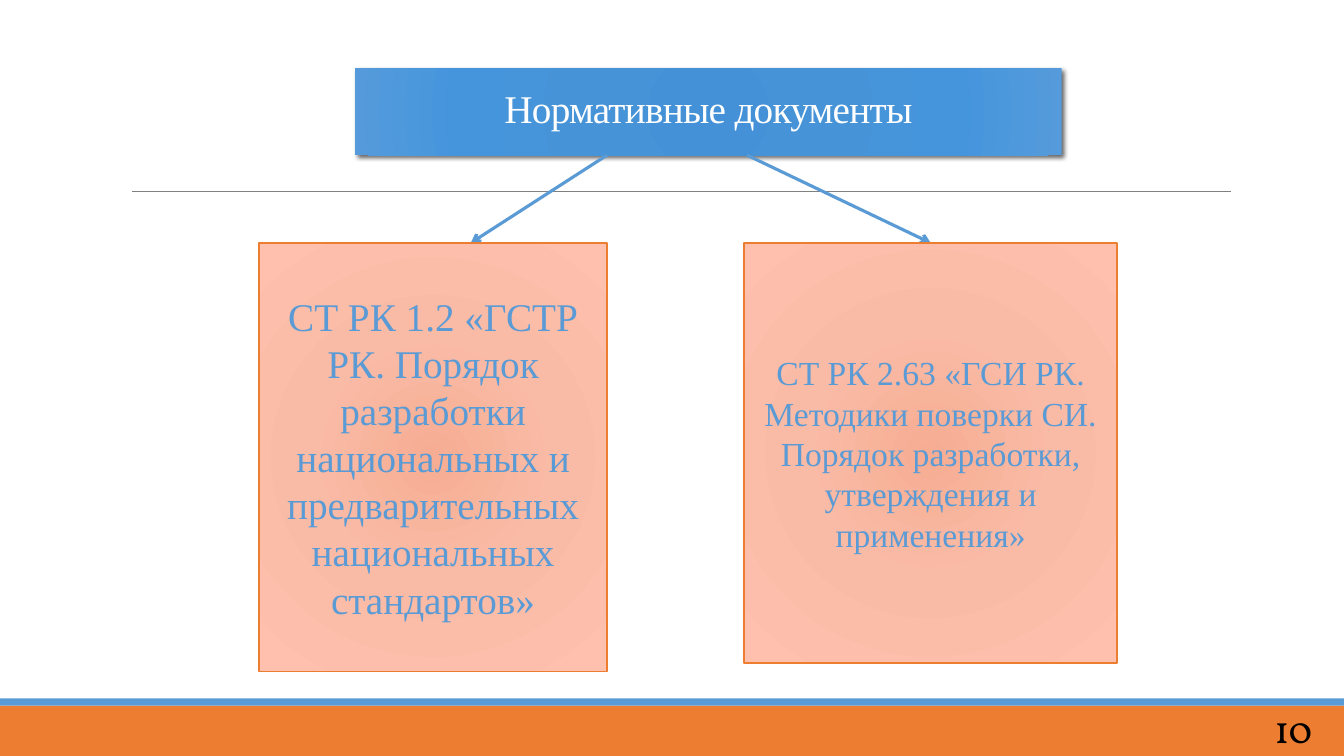
from dataclasses import dataclass
from typing import Optional

from pptx import Presentation
from pptx.dml.color import RGBColor
from pptx.enum.shapes import MSO_CONNECTOR as CONN, MSO_SHAPE as SHAPE
from pptx.enum.text import MSO_ANCHOR as ANCHOR, PP_ALIGN as ALIGN
from pptx.oxml import parse_xml
from pptx.oxml.ns import nsdecls, qn
from pptx.util import Inches, Pt

COLORS = {
    "orange": "ED7D31",
    "blue": "5B9BD5",
    "gray": "808080",
    "white": "FFFFFF",
    "black": "000000",
}
TITLE_STOPS = ((0, "4491D8"), (34, "4793D7"), (70, "4595DD"), (100, "559BDB"))
CARD_STOPS = ((0, "F6AD93"), (45, "FABBA6"), (100, "FFC1AD"))
SERIF = "Times New Roman"
CARD_TOP = 2.41
TITLE_BOTTOM = 1.54


@dataclass
class Box:
    left: float
    top: float
    width: float
    height: float
    fill: Optional[str] = None
    stops: tuple = ()
    line: Optional[str] = None


@dataclass
class Card:
    box: Box
    text: str
    size: int


@dataclass
class Line:
    x1: float
    y1: float
    x2: float
    y2: float
    color: str
    width: float
    arrow: bool = False


BANDS = [
    Box(0, 7, 13.33, 0.5, fill="orange"),
    Box(0, 6.93, 13.33, 0.07, fill="blue"),
]
TITLE = Box(3.52, 0.68, 7.01, 0.86, stops=TITLE_STOPS)
DIVIDER = Line(1.31, 1.9, 12.21, 1.9, "gray", 0.5)
ARROWS = [
    Line(x1, TITLE_BOTTOM, x2, CARD_TOP, "blue", 2.25, arrow=True)
    for x1, x2 in ((6.02, 4.67), (7.41, 9.23))
]
CARDS = [
    Card(Box(2.57, CARD_TOP, 3.45, 4.25, stops=CARD_STOPS, line="orange"),
         "СТ РК 1.2 «ГСТР РК. Порядок разработки национальных и "
         "предварительных национальных стандартов»", 28),
    Card(Box(7.38, CARD_TOP, 3.7, 4.17, stops=CARD_STOPS, line="orange"),
         "СТ РК 2.63 «ГСИ РК. Методики поверки СИ. Порядок разработки, "
         "утверждения и применения»", 24),
]


def rgb(name: str) -> RGBColor:
    return RGBColor.from_string(COLORS[name])


def set_radial_fill(s, stops: tuple) -> None:
    """Fill a shape with a gradient spreading from its centre."""
    s.fill.background()
    marks = "".join(
        f'<a:gs pos="{pos * 1000}"><a:srgbClr val="{color}"/></a:gs>'
        for pos, color in stops)
    grad = parse_xml(
        f'<a:gradFill {nsdecls("a")} rotWithShape="1"><a:gsLst>{marks}</a:gsLst>'
        '<a:path path="circle"><a:fillToRect l="100000" t="100000" '
        'r="100000" b="100000"/></a:path></a:gradFill>')
    sp_pr = s._element.spPr
    sp_pr.replace(sp_pr.find(qn("a:noFill")), grad)


def add_drop_shadow(s) -> None:
    effects = s._element.spPr.find(qn("a:effectLst"))
    effects.append(parse_xml(
        f'<a:outerShdw {nsdecls("a")} blurRad="{Pt(3.5)}" dist="{Pt(2)}" '
        f'dir="2700000" rotWithShape="0"><a:srgbClr val="{COLORS["black"]}">'
        '<a:alpha val="60000"/></a:srgbClr></a:outerShdw>'))


def add_box(slide, box: Box):
    s = slide.shapes.add_shape(
        SHAPE.RECTANGLE, Inches(box.left), Inches(box.top),
        Inches(box.width), Inches(box.height))
    s.shadow.inherit = False
    if box.stops:
        set_radial_fill(s, box.stops)
    else:
        s.fill.solid()
        s.fill.fore_color.rgb = rgb(box.fill)
    if box.line:
        s.line.color.rgb = rgb(box.line)
        s.line.width = Pt(1)
    else:
        s.line.fill.background()
    return s


def add_line(slide, line: Line) -> None:
    c = slide.shapes.add_connector(
        CONN.STRAIGHT, Inches(line.x1), Inches(line.y1),
        Inches(line.x2), Inches(line.y2))
    c.line.color.rgb = rgb(line.color)
    c.line.width = Pt(line.width)
    if line.arrow:
        c.line._get_or_add_ln().append(
            parse_xml(f'<a:tailEnd {nsdecls("a")} type="arrow"/>'))
    c._element.spPr.append(parse_xml(f'<a:effectLst {nsdecls("a")}/>'))


def set_text(s, text: str, *, size: int = 28, color: str = "blue",
             font: str = SERIF, align=ALIGN.CENTER, anchor=ANCHOR.MIDDLE,
             leading: float = 1.0, tracking: float = 0) -> None:
    tf = s.text_frame
    tf.word_wrap = True
    tf.vertical_anchor = anchor
    p = tf.paragraphs[0]
    p.alignment = align
    p.line_spacing = leading
    r = p.add_run()
    r.text = text
    r.font.size = Pt(size)
    r.font.name = font
    r.font.color.rgb = rgb(color)
    if tracking:
        r._r.get_or_add_rPr().set("spc", str(int(tracking * 100)))


def main() -> None:
    prs = Presentation()
    prs.slide_width, prs.slide_height = Inches(13.33), Inches(7.5)
    slide = prs.slides.add_slide(prs.slide_layouts[6])

    for band in BANDS:
        add_box(slide, band)
    add_line(slide, DIVIDER)

    title = add_box(slide, TITLE)
    add_drop_shadow(title)
    set_text(title, "Нормативные документы", color="white",
             leading=0.85, tracking=-0.5)

    for arrow in ARROWS:
        add_line(slide, arrow)
    for card in CARDS:
        set_text(add_box(slide, card.box), card.text, size=card.size)

    number = slide.shapes.add_textbox(
        Inches(12.54), Inches(6.92), Inches(0.64), Inches(0.58))
    set_text(number, "10", color="black", font="Vollkorn", align=ALIGN.LEFT,
             anchor=ANCHOR.BOTTOM, leading=0.85, tracking=-0.5)

    prs.save("out.pptx")


if __name__ == "__main__":
    main()
